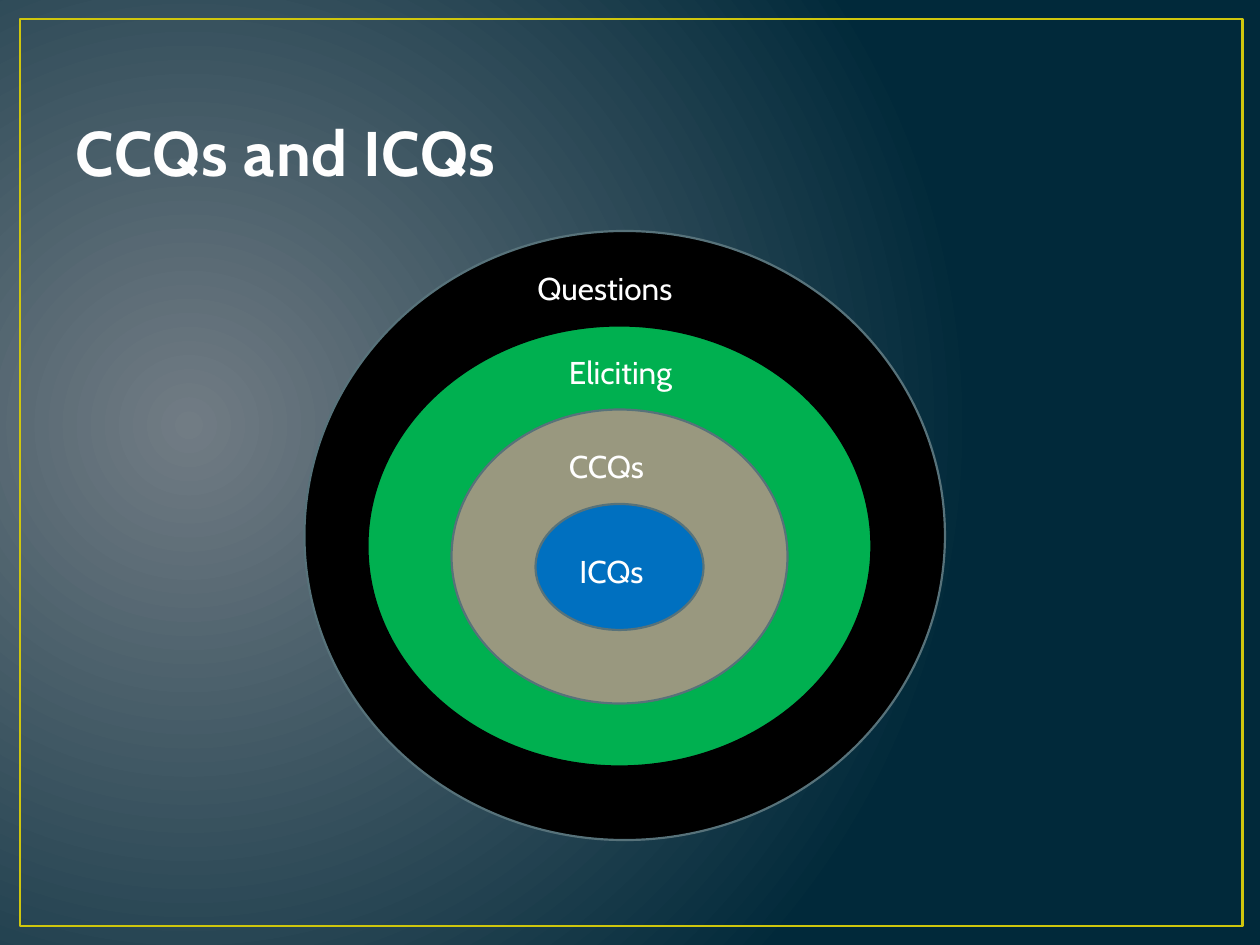
from dataclasses import dataclass

import pptx
import pptx.dml.color
import pptx.enum.shapes
import pptx.enum.text
import pptx.oxml
import pptx.oxml.ns
import pptx.util

RGBColor = pptx.dml.color.RGBColor
Shapes = pptx.enum.shapes.MSO_SHAPE
Anchor = pptx.enum.text.MSO_ANCHOR
AutoSize = pptx.enum.text.MSO_AUTO_SIZE
Align = pptx.enum.text.PP_ALIGN
qn = pptx.oxml.ns.qn

GLOW = RGBColor(0x71, 0x7C, 0x84)
NAVY = RGBColor(0x01, 0x29, 0x3A)
GOLD = RGBColor(0xCF, 0xC6, 0x0D)
BLACK = RGBColor(0, 0, 0)
GREEN = RGBColor(0, 0xB0, 0x50)
KHAKI = RGBColor(0x99, 0x98, 0x7F)
BLUE = RGBColor(0, 0x70, 0xC0)
SLATE = RGBColor(0x57, 0x72, 0x7A)
WHITE = RGBColor(0xFF, 0xFF, 0xFF)
OFF_WHITE = RGBColor(0xFE, 0xFE, 0xFE)
FONT = "Cabin"
COLUMNS, ROWS = 120, 90  # grid over the whole slide
LABEL_ROWS = 4.8


@dataclass(frozen=True)
class Ring:
    """An ellipse and its label, placed in grid columns and rows."""
    text: str
    ellipse: tuple[float, float, float, float]
    label: tuple[float, float, float]  # column, row, columns wide
    fill: RGBColor
    line: RGBColor = SLATE


RINGS = [
    Ring("Questions", (29, 22, 61, 58), (50, 25, 20), BLACK),
    Ring("Eliciting", (35, 31, 48, 42), (53, 33, 16), GREEN, BLACK),
    Ring("CCQs", (43, 39, 32, 28), (53, 42, 12), KHAKI),
    Ring("ICQs", (51, 48, 16, 12), (54, 52, 12), BLUE),
]

presentation = pptx.Presentation()
presentation.slide_width = pptx.util.Inches(10)
presentation.slide_height = pptx.util.Inches(7.5)


def place(column: float, row: float, columns: float, rows: float) -> list[int]:
    """Turn grid units into left, top, width and height."""
    across = presentation.slide_width / COLUMNS
    down = presentation.slide_height / ROWS
    return [round(column * across), round(row * down),
            round(columns * across), round(rows * down)]


def write_text(shape, text: str, *, size: float, color: RGBColor,
               bold: bool = False, spacing: float = 0,
               anchor=Anchor.TOP, auto_size=AutoSize.NONE) -> None:
    frame = shape.text_frame
    frame.word_wrap = True
    frame.auto_size = auto_size
    frame.vertical_anchor = anchor
    paragraph = frame.paragraphs[0]
    paragraph.alignment = Align.LEFT
    run = paragraph.add_run()
    run.text = text
    run.font.name = FONT
    run.font.size = pptx.util.Pt(size)
    run.font.bold = bold
    run.font.color.rgb = color
    if spacing:
        run.font._element.set("spc", str(round(spacing * 100)))


def draw_shape(slide, kind, box: list[int], line: RGBColor,
               line_width: float, fill: RGBColor | None = None) -> None:
    shape = slide.shapes.add_shape(kind, *box)
    shape.shadow.inherit = False
    if fill is None:
        shape.fill.background()
    else:
        shape.fill.solid()
        shape.fill.fore_color.rgb = fill
    shape.line.color.rgb = line
    shape.line.width = pptx.util.Pt(line_width)


def draw_label(slide, ring: Ring) -> None:
    box = slide.shapes.add_textbox(*place(*ring.label, LABEL_ROWS))
    write_text(box, ring.text, size=18, color=WHITE,
               auto_size=AutoSize.SHAPE_TO_FIT_TEXT)


def paint_background(slide) -> None:
    """Radial glow centred left of the middle."""
    fill = slide.background.fill
    fill.gradient()
    for stop, color, position in zip(fill.gradient_stops, (GLOW, NAVY), (0, 1)):
        stop.color.rgb = color
        stop.position = position
    gradient = slide.element.find(".//" + qn("a:gradFill"))
    linear = gradient.find(qn("a:lin"))
    radial = pptx.oxml.parse_xml(
        f'<a:path {pptx.oxml.ns.nsdecls("a")} path="circle">'
        '<a:fillToRect l="15000" t="50000" r="85000" b="60000"/></a:path>')
    gradient.replace(linear, radial)


def main() -> None:
    slide = presentation.slides.add_slide(presentation.slide_layouts[5])
    paint_background(slide)

    # Frame
    draw_shape(slide, Shapes.RECTANGLE, place(1.92, 1.8, 116.4, 86.4), GOLD, 1.5)

    # Title
    title = slide.shapes.title
    title.left, title.top, title.width, title.height = place(6, 3.6, 108, 15)
    write_text(title, "CCQs and ICQs", size=36, color=OFF_WHITE, bold=True,
               spacing=0.5, anchor=Anchor.BOTTOM)

    # Nested ellipses, outermost first, then their labels
    for ring in RINGS:
        draw_shape(slide, Shapes.OVAL, place(*ring.ellipse), ring.line, 1.25, ring.fill)
    for ring in reversed(RINGS):
        draw_label(slide, ring)

    presentation.save("out.pptx")


if __name__ == "__main__":
    main()
